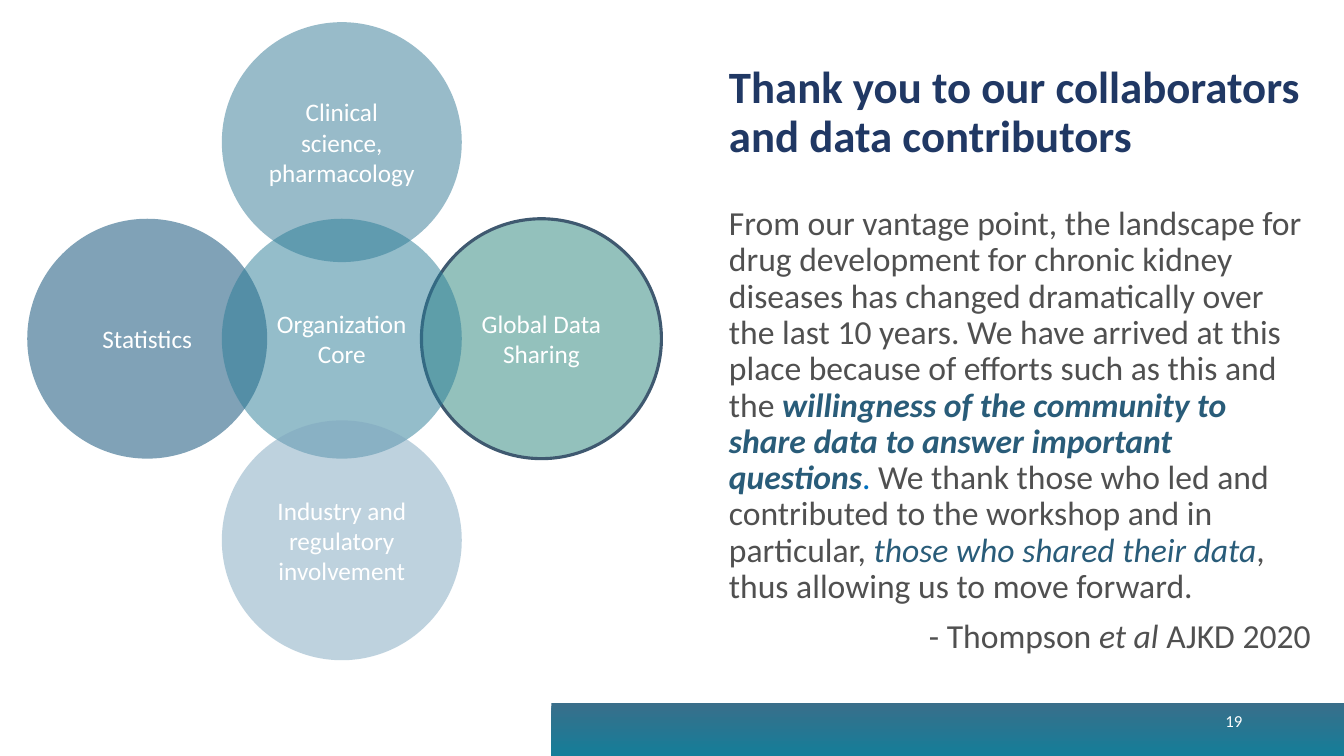
from lxml.etree import SubElement
from pptx import Presentation
from pptx.dml.color import RGBColor
from pptx.enum.shapes import MSO_SHAPE
from pptx.enum.text import MSO_ANCHOR, MSO_AUTO_SIZE, PP_ALIGN
from pptx.oxml.ns import qn
from pptx.util import Inches, Pt

NAVY, GREY, TEAL, BLUE, WHITE = "203864", "505050", "295C79", "0070C0", "FFFFFF"
DIAMETER = 2.38
COLUMNS = [0.27, 2.2, 4.18]
ROWS = [0.22, 2.17, 4.17]
TEXT_LEFT, TEXT_WIDTH = 7.13, 5.97


def rgb(value):
    return RGBColor.from_string(value)


def write(shape, paragraphs, size, color, align=PP_ALIGN.LEFT, anchor=MSO_ANCHOR.MIDDLE,
          line_spacing=1.0, space_before=0, bold=False):
    """Fill a shape with paragraphs, each a list of (text, format overrides) runs."""
    frame = shape.text_frame
    frame.word_wrap = True
    frame.auto_size = MSO_AUTO_SIZE.NONE
    frame.vertical_anchor = anchor
    for index, runs in enumerate(paragraphs):
        paragraph = frame.add_paragraph() if index else frame.paragraphs[0]
        properties = paragraph._p.get_or_add_pPr()
        properties.set("marL", "0")
        properties.set("indent", "0")
        SubElement(properties, qn("a:buNone"))
        paragraph.alignment = align
        paragraph.line_spacing = line_spacing
        paragraph.space_before = Pt(space_before if index else 0)
        for text, style in runs:
            run = paragraph.add_run()
            run.text = text
            run.font.name = "Calibri"
            run.font.size = Pt(size)
            run.font.bold = style.get("bold", bold)
            run.font.italic = style.get("italic", False)
            run.font.color.rgb = rgb(style.get("color", color))


presentation = Presentation()
presentation.slide_width = Inches(13.33)
presentation.slide_height = Inches(7.5)
slide = presentation.slides.add_slide(presentation.slide_layouts[1])

# Footer band
band = slide.shapes.add_shape(
    MSO_SHAPE.RECTANGLE, Inches(5.47), Inches(6.97), Inches(7.86), Inches(0.53))
band.shadow.inherit = False
band.line.fill.background()
band.fill.gradient()
band.fill.gradient_angle = 270
for stop, position, color in zip(band.fill.gradient_stops, (0, 1), ("396E8A", "157E99")):
    stop.position = position
    stop.color.rgb = rgb(color)

# Title and quotation
title, body = slide.shapes.title, slide.placeholders[1]
for placeholder, top, height in ((title, 0.4, 1.45), (body, 2, 4.76)):
    placeholder.left, placeholder.top = Inches(TEXT_LEFT), Inches(top)
    placeholder.width, placeholder.height = Inches(TEXT_WIDTH), Inches(height)

write(title, [[("Thank you to our collaborators and data contributors", {})]],
      size=32, color=NAVY, bold=True, line_spacing=0.9)
quotation = [
    ("From our vantage point, the landscape for drug development for chronic kidney "
     "diseases has changed dramatically over the last 10 years. We have arrived at this "
     "place because of efforts such as this and the ", {}),
    ("willingness of the community to share data to answer important questions",
     {"color": TEAL, "bold": True, "italic": True}),
    (". ", {"color": BLUE}),
    ("We thank those who led and contributed to the workshop and in particular, ", {}),
    ("those who shared their data", {"color": TEAL, "italic": True}),
    (", thus allowing us to move forward.", {}),
]
attribution = [("- Thompson ", {}), ("et al ", {"italic": True}), ("AJKD 2020", {})]
write(body, [quotation, attribution], size=24, color=GREY, anchor=MSO_ANCHOR.TOP,
      line_spacing=0.9, space_before=10)
body.text_frame.paragraphs[1].alignment = PP_ALIGN.RIGHT

# Slide number
number = slide.shapes.add_textbox(Inches(9.42), Inches(6.95), Inches(3), Inches(0.4))
write(number, [[("19", {})]], size=12, color=WHITE, align=PP_ALIGN.RIGHT)

# Overlapping circles: column, row, fill, outline, lines
circles = [
    (1, 0, "327894", None, ["Clinical science,", "pharmacology"]),
    (0, 1, "024771", None, ["Statistics"]),
    (2, 1, "29847B", "3F5970", ["Global Data", "Sharing"]),
    (1, 1, "2A7C97", None, ["Organization", "Core"]),
    (1, 2, "7FA7BF", None, ["Industry and regulatory involvement"]),
]
for column, row, color, outline, lines in circles:
    circle = slide.shapes.add_shape(
        MSO_SHAPE.OVAL, Inches(COLUMNS[column]), Inches(ROWS[row]),
        Inches(DIAMETER), Inches(DIAMETER))
    circle.shadow.inherit = False
    circle.fill.solid()
    circle.fill.fore_color.rgb = rgb(color)
    fill_color = circle.element.spPr.find(qn("a:solidFill")).find(qn("a:srgbClr"))
    SubElement(fill_color, qn("a:alpha"), val="50000")
    if outline:
        circle.line.color.rgb = rgb(outline)
        circle.line.width = Pt(2.25)
    else:
        circle.line.fill.background()
    write(circle, [[(line, {})] for line in lines], size=18, color=WHITE,
          align=PP_ALIGN.CENTER)

presentation.save("out.pptx")
